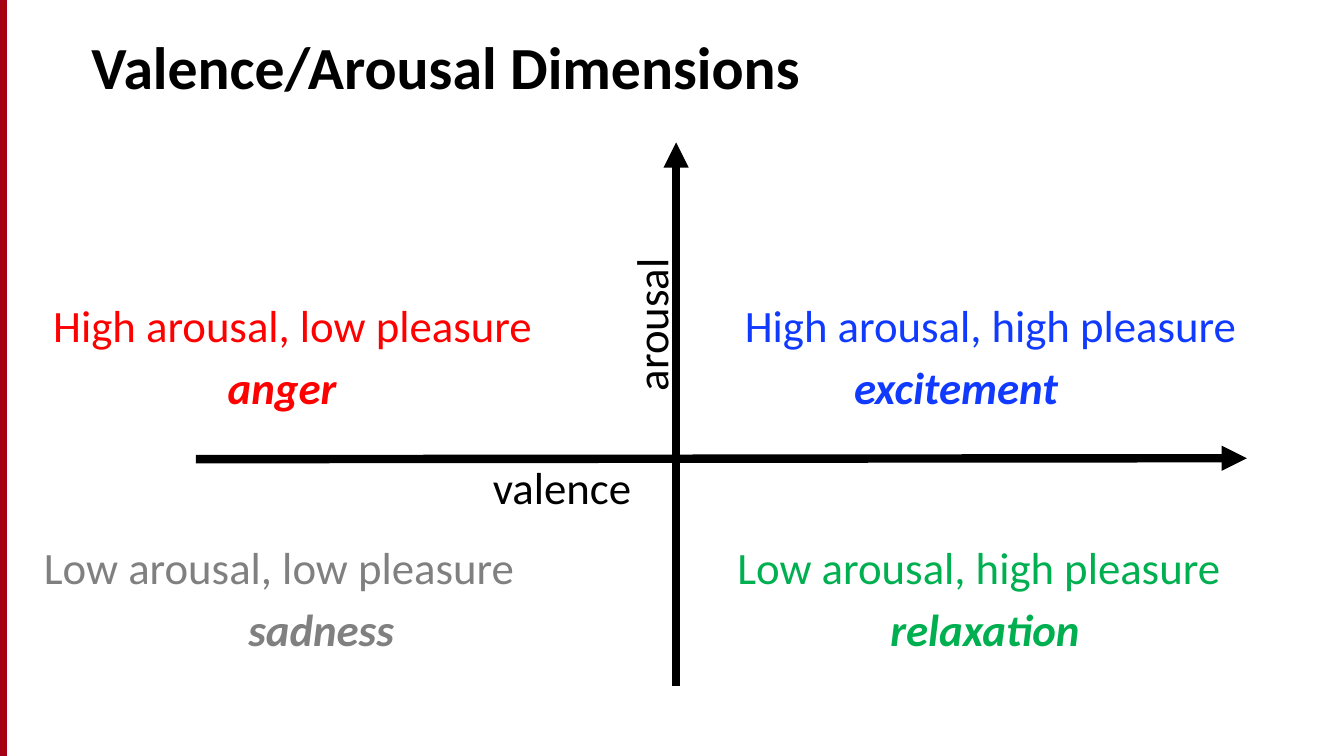
from dataclasses import dataclass

from lxml.etree import SubElement
from pptx import Presentation
from pptx.dml.color import RGBColor
from pptx.enum.shapes import MSO_CONNECTOR as Connector, MSO_SHAPE as Shape
from pptx.enum.text import MSO_ANCHOR as Anchor, PP_ALIGN as Align
from pptx.oxml.ns import qn
from pptx.util import Pt


@dataclass(frozen=True)
class Theme:
    font: str = "Calibri"
    title_size: float = 32
    body_size: float = 24
    axis_width: float = 4.5
    ink: str = "000000"
    bar_fill: str = "A40508"
    bar_line: str = "A4001D"
    anger: str = "FF0000"
    excitement: str = "113AFF"
    sadness: str = "808080"
    relaxation: str = "00B050"


THEME = Theme()
UPPER_ROW, LOWER_ROW = 159.4, 289

# phrase, feeling, colour, left, top, indent of the feeling
QUADRANTS = [
    ("High arousal, low pleasure", "anger", THEME.anger, 28.5, UPPER_ROW, 93.5),
    ("High arousal, high pleasure", "excitement", THEME.excitement, 399, UPPER_ROW, 58.5),
    ("Low arousal, low pleasure", "sadness", THEME.sadness, 23.5, LOWER_ROW, 109.5),
    ("Low arousal, high pleasure", "relaxation", THEME.relaxation, 395, LOWER_ROW, 82),
]


def format_paragraph(paragraph, size, color, bold=False, italic=False):
    for run in paragraph.runs:
        font = run.font
        font.name, font.size = THEME.font, Pt(size)
        font.bold, font.italic = bold, italic
        font.color.rgb = RGBColor.from_string(color)


def set_title(slide, text):
    title = slide.shapes.title
    title.left, title.top, title.width, title.height = Pt(41.8), Pt(14.5), Pt(678.2), Pt(40)
    frame = title.text_frame
    frame.text = text
    frame.vertical_anchor = Anchor.BOTTOM
    frame.margin_top = frame.margin_bottom = 0
    paragraph = frame.paragraphs[0]
    paragraph.alignment = Align.LEFT
    format_paragraph(paragraph, THEME.title_size, THEME.ink, bold=True)


def add_side_bar(slide, height):
    bar = slide.shapes.add_shape(Shape.RECTANGLE, 0, 0, Pt(3.6), height)
    bar.shadow.inherit = False
    bar.fill.solid()
    bar.fill.fore_color.rgb = RGBColor.from_string(THEME.bar_fill)
    bar.line.color.rgb = RGBColor.from_string(THEME.bar_line)
    bar.line.width = Pt(0.75)


def add_axis(slide, *ends):
    """Draw an arrow from x1, y1 to x2, y2."""
    axis = slide.shapes.add_connector(Connector.STRAIGHT, *map(Pt, ends))
    axis.line.color.rgb = RGBColor.from_string(THEME.ink)
    axis.line.width = Pt(THEME.axis_width)
    properties = axis.line._get_or_add_ln()
    SubElement(properties, qn("a:tailEnd"), type="triangle")
    SubElement(properties.getparent(), qn("a:effectLst"))


def add_axis_label(slide, text, left, top, width, rotation=0):
    label = slide.shapes.add_textbox(Pt(left), Pt(top), Pt(width), Pt(36))
    label.rotation = rotation
    label.text_frame.text = text
    format_paragraph(label.text_frame.paragraphs[0], THEME.body_size, THEME.ink)


def add_quadrant(slide, phrase, feeling, color, left, top, indent):
    box = slide.shapes.add_textbox(Pt(left), Pt(top), Pt(290), Pt(64))
    frame = box.text_frame
    frame.word_wrap = True
    frame.margin_left = frame.margin_right = frame.margin_top = frame.margin_bottom = 0
    frame.text = phrase
    format_paragraph(frame.paragraphs[0], THEME.body_size, color)
    paragraph = frame.add_paragraph()
    paragraph.text = feeling
    paragraph.space_before = Pt(4.8)
    paragraph._p.get_or_add_pPr().set("marL", str(Pt(indent)))
    format_paragraph(paragraph, THEME.body_size, color, bold=True, italic=True)


def main():
    presentation = Presentation()
    presentation.slide_width, presentation.slide_height = Pt(720), Pt(405)
    slide = presentation.slides.add_slide(presentation.slide_layouts[5])
    add_side_bar(slide, presentation.slide_height)
    set_title(slide, "Valence/Arousal Dimensions")
    for quadrant in QUADRANTS:
        add_quadrant(slide, *quadrant)
    add_axis(slide, 105, 246, 668, 245.5)
    add_axis(slide, 362.2, 367.7, 362.2, 76.3)
    add_axis_label(slide, "arousal", 305.3, 155.5, 86.4, rotation=270)
    add_axis_label(slide, "valence", 257, 242.6, 89.3)
    presentation.save("out.pptx")


if __name__ == "__main__":
    main()
